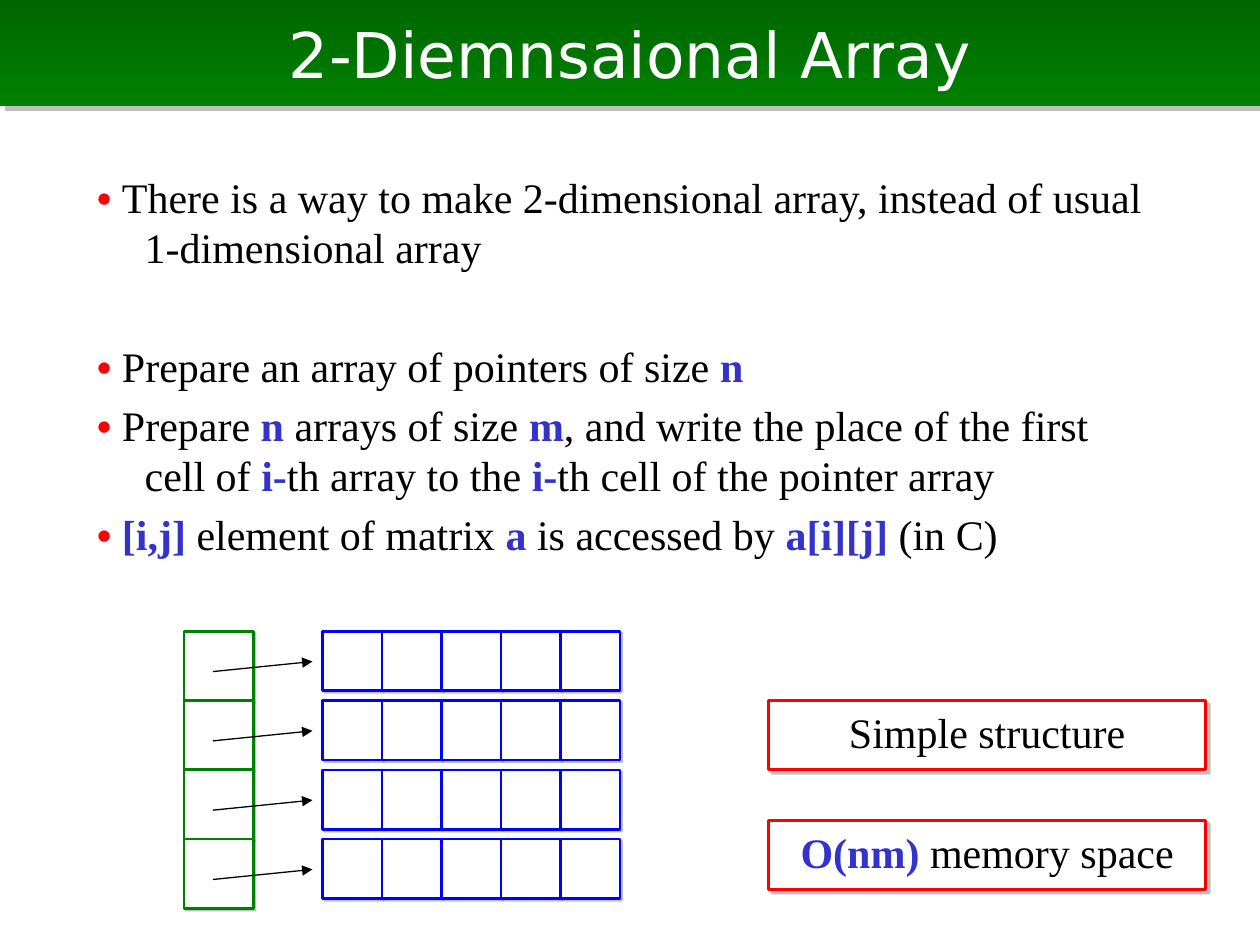
from typing import NamedTuple

from lxml.etree import SubElement
from pptx import Presentation
from pptx.dml.color import RGBColor
from pptx.enum.shapes import MSO_CONNECTOR as Connector, MSO_SHAPE as Shape
from pptx.enum.text import MSO_ANCHOR as Anchor, PP_ALIGN as Align
from pptx.oxml.ns import qn
from pptx.util import Inches, Pt

GREEN, BLUE, RED = "008000", "0000FF", "FF0000"
BLACK, WHITE, CODE = "000000", "FFFFFF", "3333CC"
SERIF, SANS = "Times New Roman", "DejaVu Sans"

POINTER_LEFT, TOP, ROW_PITCH, ROWS = 1.46, 5.01, 0.55, 4
ARRAY_LEFT, ARRAY_WIDTH, COLUMNS = 2.56, 2.36, 5
CELL = ARRAY_WIDTH / COLUMNS


class Run(NamedTuple):
    text: str
    color: str = BLACK
    bold: bool = False


class Box(NamedTuple):
    left: float
    top: float
    width: float
    height: float
    line: str
    shadow: float = 1.4


class Note(NamedTuple):
    box: Box
    runs: list[Run]


def code(text: str) -> Run:
    return Run(text, CODE, True)


def rgb(color: str) -> RGBColor:
    return RGBColor.from_string(color)


def write(paragraph, runs: list[Run], *, font=SERIF, size=24, align=Align.LEFT, before=5.0):
    paragraph.alignment = align
    paragraph.space_before = Pt(before)
    for part in runs:
        run = paragraph.add_run()
        run.text = part.text
        run.font.name = font
        run.font.size = Pt(size)
        run.font.bold = part.bold
        run.font.color.rgb = rgb(part.color)


def add_shadow(shape, distance: float):
    """Give the shape a half-transparent grey shadow to the lower right."""
    shape.shadow.inherit = False
    effects = shape._element.spPr.find(qn("a:effectLst"))
    outer = SubElement(effects, qn("a:outerShdw"), blurRad="0", dist=str(Pt(distance)),
                       dir=str(45 * 60000), algn="ctr", rotWithShape="0")
    color = SubElement(outer, qn("a:srgbClr"), val="808080")
    SubElement(color, qn("a:alpha"), val="50000")


def place(shape, left: float, top: float, width: float, height: float):
    shape.left, shape.top = Inches(left), Inches(top)
    shape.width, shape.height = Inches(width), Inches(height)


def draw_box(slide, box: Box):
    shape = slide.shapes.add_shape(Shape.RECTANGLE, 0, 0, 0, 0)
    place(shape, *box[:4])
    shape.fill.solid()
    shape.fill.fore_color.rgb = rgb(WHITE)
    shape.line.color.rgb = rgb(box.line)
    shape.line.width = Pt(1.5)
    add_shadow(shape, box.shadow)
    return shape


def draw_arrow(slide, x1: float, y1: float, x2: float, y2: float):
    arrow = slide.shapes.add_connector(
        Connector.STRAIGHT, Inches(x1), Inches(y1), Inches(x2), Inches(y2))
    arrow.line.color.rgb = rgb(BLACK)
    arrow.line.width = Pt(0.75)
    SubElement(arrow.line._get_or_add_ln(), qn("a:tailEnd"), type="triangle")
    SubElement(arrow._element.spPr, qn("a:effectLst"))


def draw_title(slide, text: str):
    title = slide.shapes.title
    place(title, 0, 0, 10, 0.84)
    title.fill.gradient()
    title.fill.gradient_angle = 270
    for stop, color in zip(title.fill.gradient_stops, ("006600", GREEN)):
        stop.color.rgb = rgb(color)
    add_shadow(title, 4.2)
    title.text_frame.vertical_anchor = Anchor.MIDDLE
    write(title.text_frame.paragraphs[0], [Run(text, WHITE)],
          font=SANS, size=36, align=Align.CENTER, before=0)


def draw_points(slide, points: list[list[Run]]):
    frame = slide.shapes.add_textbox(
        Inches(0.67), Inches(1.31), Inches(8.5), Inches(5.51)).text_frame
    frame.word_wrap = True
    for index, runs in enumerate(points):
        paragraph = frame.paragraphs[0] if index == 0 else frame.add_paragraph()
        # The second point opens a new group, one line further down.
        write(paragraph, [Run("• ", RED, True), *runs], before=39 if index == 1 else 5)
        properties = paragraph._p.get_or_add_pPr()
        properties.set("marL", str(Inches(0.38)))
        properties.set("indent", str(Inches(-0.38)))


def draw_arrays(slide):
    tops = [TOP + row * ROW_PITCH for row in range(ROWS)]
    for top in tops:
        draw_box(slide, Box(POINTER_LEFT, top, ROW_PITCH, ROW_PITCH, GREEN))
    for top in tops:
        for column in range(COLUMNS):
            draw_box(slide, Box(ARRAY_LEFT + column * CELL, top, CELL, CELL, BLUE))
    for top in tops:
        draw_arrow(slide, 1.69, top + 0.32, 2.48, top + 0.24)


def draw_note(slide, note: Note):
    frame = draw_box(slide, note.box).text_frame
    frame.word_wrap = True
    frame.vertical_anchor = Anchor.TOP
    write(frame.paragraphs[0], note.runs, align=Align.CENTER)


POINTS = [
    [Run("There is a way to make 2-dimensional array, instead of usual 1-dimensional array")],
    [Run("Prepare an array of pointers of size "), code("n")],
    [Run("Prepare "), code("n "), Run("arrays of size "), code("m"),
     Run(", and write the place of the first cell of "), code("i-"),
     Run("th array to the "), code("i-"), Run("th cell of the pointer array")],
    [code("[i,j] "), Run("element of matrix "), code("a"), Run(" is accessed by "),
     code("a[i][j] "), Run("(in C)")],
]
NOTES = [
    Note(Box(6.1, 6.51, 3.47, 0.55, RED, 2.8), [code("O(nm) "), Run("memory space")]),
    Note(Box(6.1, 5.56, 3.47, 0.55, RED, 2.8), [Run("Simple structure")]),
]


def main():
    deck = Presentation()
    deck.slide_width, deck.slide_height = Inches(10), Inches(7.5)
    slide = deck.slides.add_slide(deck.slide_layouts[5])
    draw_title(slide, "2-Diemnsaional Array")
    draw_points(slide, POINTS)
    draw_arrays(slide)
    for note in NOTES:
        draw_note(slide, note)
    deck.save("out.pptx")


if __name__ == "__main__":
    main()
